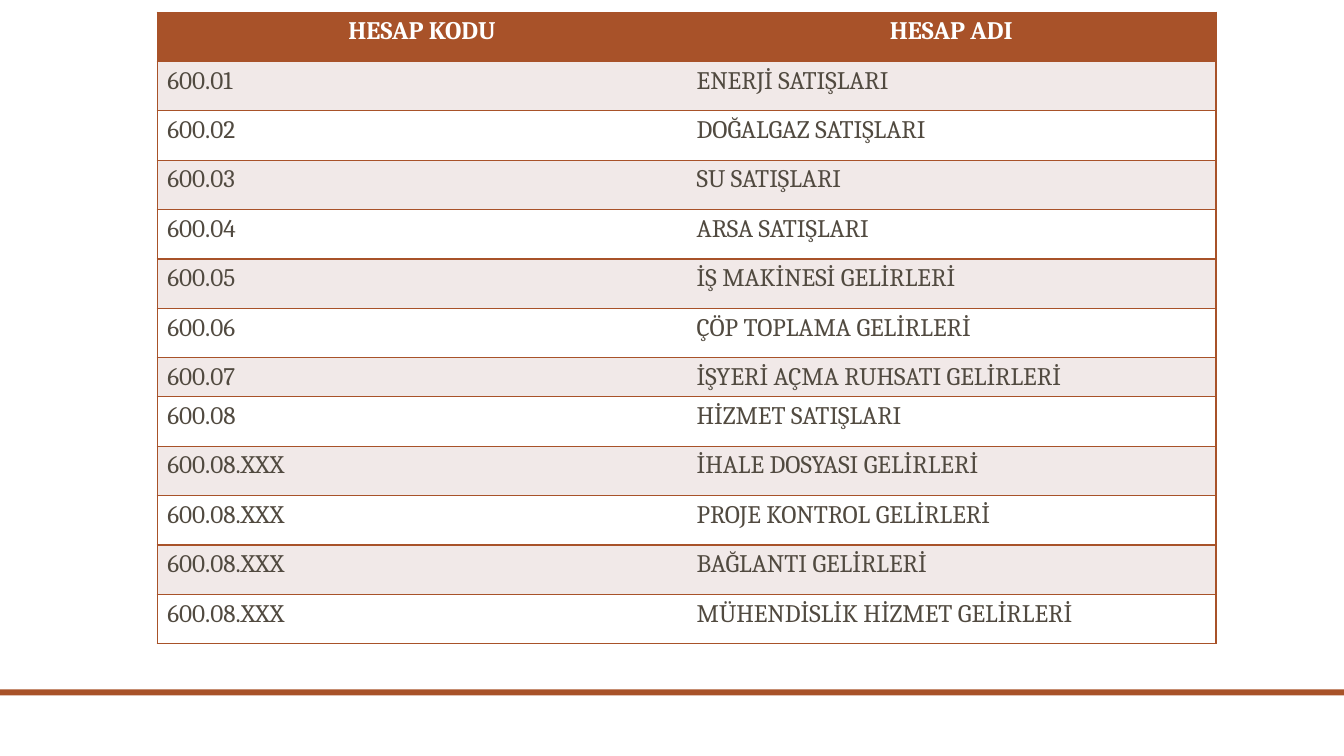
from lxml import etree
from pptx import Presentation
from pptx.dml.color import RGBColor
from pptx.enum import shapes, text
from pptx.oxml import ns
from pptx.util import Inches, Pt

COLORS = {"rust": "A85229", "band": "F1E9E8", "white": "FFFFFF", "ink": "514A40"}
FONT = "Cambria"
ROW_HEIGHT, SHORT_ROW_HEIGHT, SHORT_ROW = 0.49, 0.35, 7

ACCOUNTS = [
    ("HESAP KODU", "HESAP ADI"),
    ("600.01", "ENERJİ SATIŞLARI"),
    ("600.02", "DOĞALGAZ SATIŞLARI"),
    ("600.03", "SU SATIŞLARI"),
    ("600.04", "ARSA SATIŞLARI"),
    ("600.05", "İŞ MAKİNESİ GELİRLERİ"),
    ("600.06", "ÇÖP TOPLAMA GELİRLERİ"),
    ("600.07", "İŞYERİ AÇMA RUHSATI GELİRLERİ"),
    ("600.08", "HİZMET SATIŞLARI"),
    ("600.08.XXX", "İHALE DOSYASI GELİRLERİ"),
    ("600.08.XXX", "PROJE KONTROL GELİRLERİ"),
    ("600.08.XXX", "BAĞLANTI GELİRLERİ"),
    ("600.08.XXX", "MÜHENDİSLİK HİZMET GELİRLERİ"),
]


def rgb(name):
    return RGBColor.from_string(COLORS[name])


def set_borders(cell, open_side):
    """Draw every side of the cell except the one facing the other column."""
    tc_pr = cell._tc.get_or_add_tcPr()
    for side in "LRTB":
        ln = etree.SubElement(tc_pr, ns.qn(f"a:ln{side}"), w=str(Pt(1)))
        if side == open_side:
            etree.SubElement(ln, ns.qn("a:noFill"))
        else:
            fill = etree.SubElement(ln, ns.qn("a:solidFill"))
            etree.SubElement(fill, ns.qn("a:srgbClr"), val=COLORS["rust"])


def style_cell(cell, wording, fill, ink, header):
    cell.fill.solid()
    cell.fill.fore_color.rgb = rgb(fill)
    cell.text_frame.text = wording
    p = cell.text_frame.paragraphs[0]
    p.alignment = text.PP_ALIGN.CENTER if header else text.PP_ALIGN.LEFT
    font = p.runs[0].font
    font.name, font.size, font.bold = FONT, Pt(18), header
    font.color.rgb = rgb(ink)


def add_account_table(s):
    frame = s.shapes.add_table(len(ACCOUNTS), 2, Inches(1.56), Inches(0.12),
                               Inches(10.5), Inches(6.29))
    table = frame.table
    for i, account in enumerate(ACCOUNTS):
        height = SHORT_ROW_HEIGHT if i == SHORT_ROW else ROW_HEIGHT
        table.rows[i].height = Inches(height)
        header = i == 0
        fill = "rust" if header else "band" if i % 2 else "white"
        ink = "white" if header else "ink"
        for j, wording in enumerate(account):
            cell = table.cell(i, j)
            set_borders(cell, "RL"[j])
            style_cell(cell, wording, fill, ink, header)


def add_footer_bar(s, width):
    bar = s.shapes.add_shape(shapes.MSO_SHAPE.RECTANGLE, 0, Inches(6.84),
                             width, Inches(0.06))
    bar.shadow.inherit = False
    bar.fill.solid()
    bar.fill.fore_color.rgb = rgb("rust")
    bar.line.fill.background()


def main():
    prs = Presentation()
    prs.slide_width, prs.slide_height = Inches(13.33), Inches(7.5)
    s = prs.slides.add_slide(prs.slide_layouts[6])  # blank layout
    add_footer_bar(s, prs.slide_width)
    add_account_table(s)
    prs.save("out.pptx")


if __name__ == "__main__":
    main()
